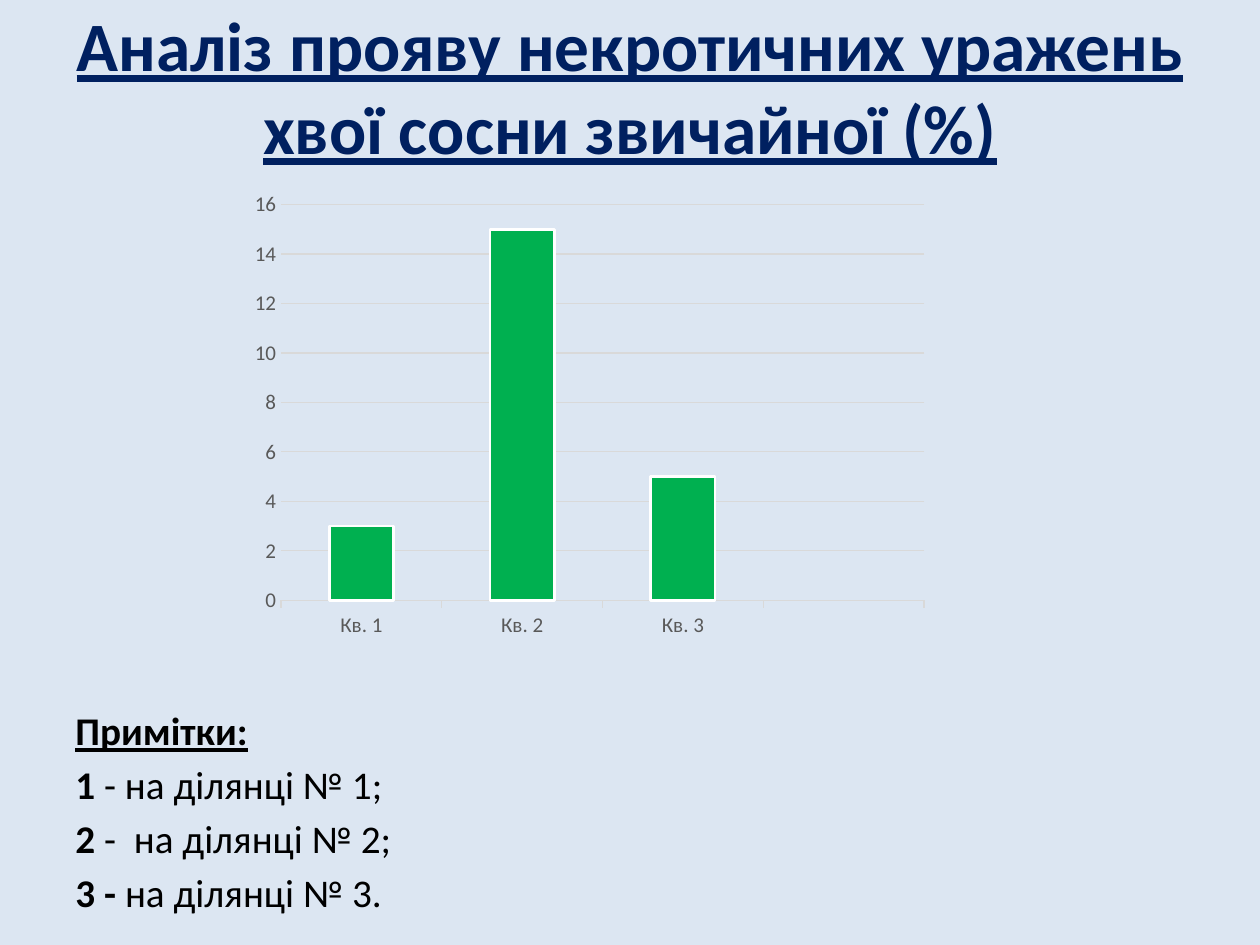
"""Build a slide charting necrotic damage of Scots pine needles on three plots."""
from dataclasses import dataclass

from lxml.etree import SubElement
from pptx import Presentation
from pptx.chart.chart import Chart
from pptx.chart.data import CategoryChartData
from pptx.dml.color import RGBColor
from pptx.enum.chart import XL_CHART_TYPE as ChartType, XL_TICK_MARK as TickMark
from pptx.enum.text import MSO_ANCHOR as Anchor, MSO_AUTO_SIZE as AutoSize, PP_ALIGN as Align
from pptx.oxml.ns import qn
from pptx.slide import Slide
from pptx.text.text import Font
from pptx.util import Cm, Pt

FONT_NAME = "Calibri"
BACKGROUND = RGBColor(0xDC, 0xE6, 0xF2)
NAVY = RGBColor(0x00, 0x20, 0x60)
BLACK = RGBColor(0x00, 0x00, 0x00)
WHITE = RGBColor(0xFF, 0xFF, 0xFF)
GREEN = RGBColor(0x00, 0xB0, 0x50)
AXIS_TEXT = RGBColor(0x59, 0x59, 0x59)
GRID = RGBColor(0xD9, 0xD9, 0xD9)
PLOT_AREA = {"x": 0.068, "y": 0.043, "w": 0.913, "h": 0.868}


@dataclass(frozen=True)
class NoteLine:
    label: str
    description: str = ""
    underline: bool = False


NOTES = (
    NoteLine("Примітки:", underline=True),
    NoteLine("1 ", "- на ділянці № 1;"),
    NoteLine("2 ", "-  на ділянці № 2;"),
    NoteLine("3 - ", "на ділянці № 3."),
)


def style_font(font: Font, size: float, color: RGBColor,
               bold: bool = False, underline: bool = False) -> None:
    font.name = FONT_NAME
    font.size = Pt(size)
    font.color.rgb = color
    font.bold = bold
    font.underline = underline


def add_title(slide: Slide) -> None:
    title = slide.shapes.title
    title.left, title.top, title.width, title.height = Cm(1.27), Cm(0.53), Cm(22.86), Cm(2.39)
    frame = title.text_frame
    frame.auto_size = AutoSize.NONE
    frame.vertical_anchor = Anchor.MIDDLE
    paragraph = frame.paragraphs[0]
    paragraph.alignment = Align.CENTER
    run = paragraph.add_run()
    run.text = "Аналіз прояву некротичних уражень хвої сосни звичайної (%)"
    style_font(run.font, 39.6, NAVY, bold=True, underline=True)


def add_notes_box(slide: Slide) -> None:
    frame = slide.shapes.add_textbox(Cm(1.27), Cm(14.12), Cm(22.86), Cm(4.19)).text_frame
    frame.word_wrap = True
    for index, note in enumerate(NOTES):
        paragraph = frame.add_paragraph() if index else frame.paragraphs[0]
        paragraph.space_before = Pt(4 if index else 0)
        label = paragraph.add_run()
        label.text = note.label
        style_font(label.font, 22.4, BLACK, bold=True, underline=note.underline)
        if note.description:
            description = paragraph.add_run()
            description.text = note.description
            style_font(description.font, 22.4, BLACK)


def set_plot_layout(chart: Chart) -> None:
    plot_area = chart.plots[0]._element.getparent()
    for old_layout in plot_area.findall(qn("c:layout")):
        plot_area.remove(old_layout)
    layout = SubElement(plot_area, qn("c:layout"))
    plot_area.insert(0, layout)
    manual = SubElement(layout, qn("c:manualLayout"))
    settings = {"layoutTarget": "inner", "xMode": "edge", "yMode": "edge", **PLOT_AREA}
    for name, value in settings.items():
        SubElement(manual, qn(f"c:{name}")).set("val", str(value))


def add_damage_chart(slide: Slide) -> None:
    data = CategoryChartData()
    data.categories = ["Кв. 1", "Кв. 2", "Кв. 3", ""]
    data.add_series("Series 1", (3, 15, 5, None))
    chart = slide.shapes.add_chart(ChartType.COLUMN_STACKED, Cm(4.7), Cm(3.73),
                                   Cm(14.2), Cm(9.19), data).chart
    chart.has_legend = False
    chart.has_title = False
    style_font(chart.font, 10, BLACK)
    set_plot_layout(chart)

    plot = chart.plots[0]
    plot.gap_width = 150
    plot.overlap = 100
    plot.vary_by_categories = False
    series = plot.series[0]
    series.format.fill.solid()
    series.format.fill.fore_color.rgb = GREEN
    series.format.line.color.rgb = WHITE
    series.format.line.width = Pt(1.5)

    category_axis, value_axis = chart.category_axis, chart.value_axis
    for axis in (category_axis, value_axis):
        style_font(axis.tick_labels.font, 12, AXIS_TEXT)
    category_axis.major_tick_mark = TickMark.OUTSIDE
    value_axis.major_tick_mark = TickMark.NONE
    value_axis.minimum_scale, value_axis.maximum_scale, value_axis.major_unit = 0, 16, 2
    value_axis.has_major_gridlines = True
    value_axis.format.line.fill.background()
    for line in (category_axis.format.line, value_axis.major_gridlines.format.line):
        line.color.rgb = GRID
        line.width = Pt(0.75)


def main() -> None:
    presentation = Presentation()
    presentation.slide_width, presentation.slide_height = Cm(25.4), Cm(19.05)
    slide = presentation.slides.add_slide(presentation.slide_layouts.get_by_name("Title Only"))
    slide.background.fill.solid()
    slide.background.fill.fore_color.rgb = BACKGROUND
    add_title(slide)
    add_notes_box(slide)
    add_damage_chart(slide)
    presentation.save("out.pptx")


if __name__ == "__main__":
    main()
